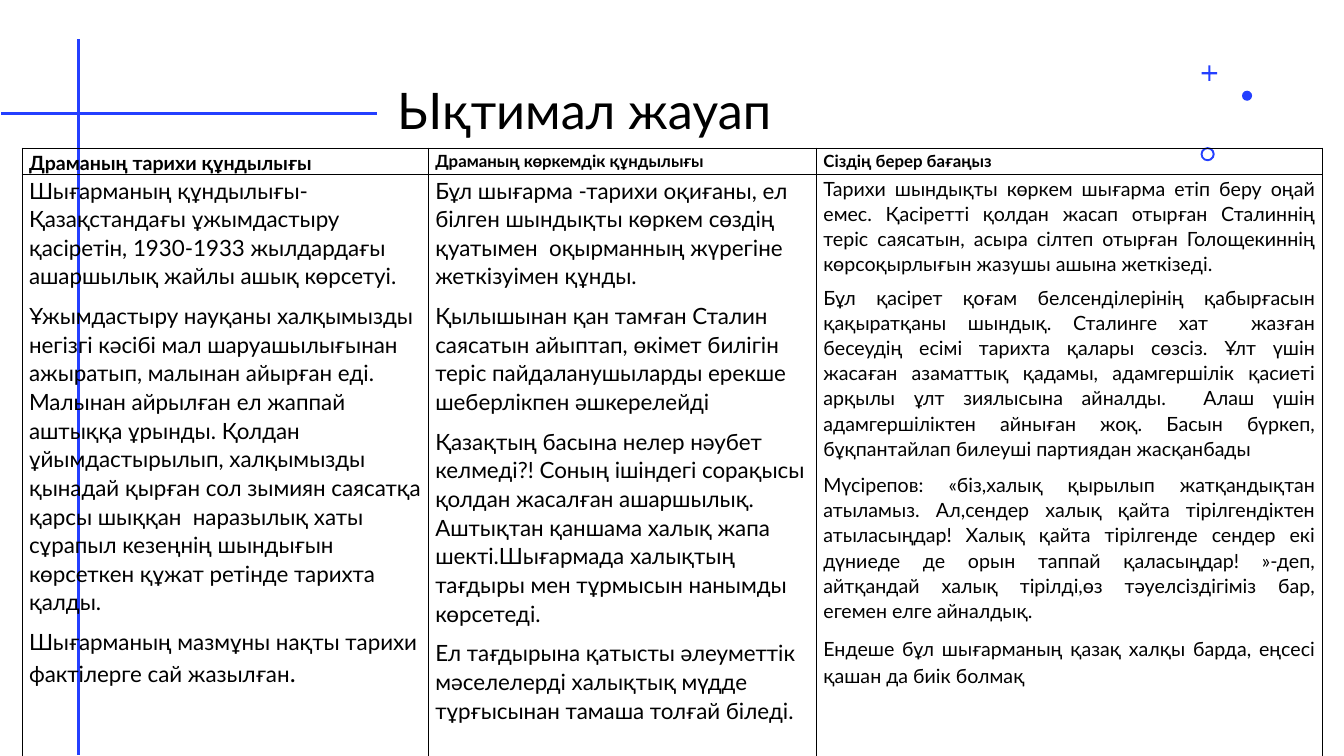
from lxml import etree
from pptx import Presentation
from pptx import util as u
from pptx.dml.color import RGBColor
from pptx.enum import shapes, text
from pptx.oxml import ns

BLACK = RGBColor(0x00, 0x00, 0x00)
BLUE = RGBColor(0x24, 0x3F, 0xFF)
FONT = "Lato"

HEADINGS = [
    ("Драманың тарихи құндылығы", 14),
    ("Драманың көркемдік құндылығы", 12),
    ("Сіздің берер бағаңыз", 12),
]
HISTORY = [
    "Шығарманың құндылығы-Қазақстандағы ұжымдастыру қасіретін, 1930-1933 жылдардағы "
    "ашаршылық жайлы ашық көрсетуі.",
    "Ұжымдастыру науқаны халқымызды негізгі кәсібі мал шаруашылығынан ажыратып, малынан "
    "айырған еді. Малынан айрылған ел жаппай аштыққа ұрынды. Қолдан ұйымдастырылып, "
    "халқымызды қынадай қырған сол зымиян саясатқа қарсы шыққан  наразылық хаты сұрапыл "
    "кезеңнің шындығын көрсеткен құжат ретінде тарихта қалды.",
    "Шығарманың мазмұны нақты тарихи фактілерге сай жазылған",
]
ARTISTRY = [
    "Бұл шығарма -тарихи оқиғаны, ел білген шындықты көркем сөздің қуатымен  оқырманның "
    "жүрегіне жеткізуімен құнды.",
    "Қылышынан қан тамған Сталин саясатын айыптап, өкімет билігін теріс пайдаланушыларды "
    "ерекше шеберлікпен әшкерелейді",
    "Қазақтың басына нелер нәубет келмеді?! Соның ішіндегі сорақысы қолдан жасалған "
    "ашаршылық. Аштықтан қаншама халық жапа шекті.Шығармада халықтың тағдыры мен "
    "тұрмысын нанымды көрсетеді.",
    "Ел тағдырына қатысты әлеуметтік мәселелерді халықтық мүдде тұрғысынан тамаша толғай "
    "біледі.",
]
OPINION = [
    "Тарихи шындықты көркем шығарма етіп беру оңай емес. Қасіретті қолдан жасап отырған "
    "Сталиннің теріс саясатын, асыра сілтеп отырған Голощекиннің көрсоқырлығын жазушы "
    "ашына жеткізеді.",
    "Бұл қасірет қоғам белсенділерінің қабырғасын қақыратқаны шындық. Сталинге хат  жазған "
    "бесеудің есімі тарихта қалары сөзсіз. Ұлт үшін жасаған азаматтық қадамы, адамгершілік "
    "қасиеті арқылы ұлт зиялысына айналды.  Алаш үшін адамгершіліктен айныған жоқ. Басын "
    "бүркеп, бұқпантайлап билеуші партиядан жасқанбады",
    "Мүсірепов: «біз,халық қырылып жатқандықтан атыламыз. Ал,сендер халық қайта "
    "тірілгендіктен атыласыңдар! Халық қайта тірілгенде сендер екі дүниеде де орын таппай "
    "қаласыңдар! »-деп, айтқандай халық тірілді,өз тәуелсіздігіміз бар, егемен елге айналдық.",
    "Ендеше бұл шығарманың қазақ халқы барда, еңсесі қашан да биік болмақ",
]


def apply(target, formats):
    for name, value in formats.items():
        setattr(target, name, value)


def format_font(font, size, bold=False):
    apply(font, {"name": FONT, "size": u.Pt(size), "bold": bold})
    font.color.rgb = BLACK


def add_title(slide, box, words):
    title = slide.shapes.title
    apply(title, dict(zip(("left", "top", "width", "height"), map(u.Pt, box))))
    frame = title.text_frame
    apply(frame, {"text": words, "word_wrap": True, "auto_size": text.MSO_AUTO_SIZE.NONE,
                  "vertical_anchor": text.MSO_ANCHOR.MIDDLE})
    paragraph = frame.paragraphs[0]
    apply(paragraph, {"alignment": text.PP_ALIGN.LEFT, "line_spacing": 0.9})
    format_font(paragraph.font, 36)


def add_rule(slide, *ends):
    rule = slide.shapes.add_connector(shapes.MSO_CONNECTOR.STRAIGHT, *map(u.Pt, ends))
    rule.line.color.rgb = BLUE
    rule.line.width = u.Pt(2)
    etree.SubElement(rule._element.spPr, ns.qn("a:effectLst"))


def add_ornaments(slide, left, top):
    """Place the plus, dot and ring around the given corner."""
    marks = [
        (shapes.MSO_SHAPE.CROSS, 0.6, 0, 11, 0.43),
        (shapes.MSO_SHAPE.OVAL, 29.4, 18, 7.2, None),
        (shapes.MSO_SHAPE.DONUT, -0.2, 58.3, 10.1, 0.14),
    ]
    for kind, dx, dy, size, adjustment in marks:
        mark = slide.shapes.add_shape(
            kind, u.Pt(left + dx), u.Pt(top + dy), u.Pt(size), u.Pt(size))
        if adjustment:
            mark.adjustments[0] = adjustment
        mark.shadow.inherit = False
        mark.fill.solid()
        mark.fill.fore_color.rgb = BLUE
        mark.line.fill.background()


def add_borders(cell):
    properties = cell._tc.get_or_add_tcPr()
    for position, side in enumerate(("lnL", "lnR", "lnT", "lnB")):
        border = etree.Element(ns.qn(f"a:{side}"), w=str(u.Pt(1)))
        fill = etree.SubElement(border, ns.qn("a:solidFill"))
        etree.SubElement(fill, ns.qn("a:srgbClr"), val=str(BLACK))
        properties.insert(position, border)


def fill_cell(cell, lines, size, bold=False, alignment=text.PP_ALIGN.LEFT):
    apply(cell, {"margin_left": u.Pt(5), "margin_right": u.Pt(5),
                 "margin_top": u.Pt(0.7), "margin_bottom": 0,
                 "vertical_anchor": text.MSO_ANCHOR.TOP})
    cell.fill.background()
    add_borders(cell)
    cell.text = "\n".join(lines)
    for paragraph in cell.text_frame.paragraphs:
        apply(paragraph, {"alignment": alignment, "line_spacing": 1.07,
                          "space_after": u.Pt(8)})
        for run in paragraph.runs:
            format_font(run.font, size, bold)


def add_answer_table(slide, left, top, widths, heights):
    table = slide.shapes.add_table(
        len(heights), len(widths), u.Pt(left), u.Pt(top),
        u.Pt(sum(widths)), u.Pt(sum(heights))).table
    apply(table, {"first_row": False, "horz_banding": False})
    for column, width in zip(table.columns, widths):
        column.width = u.Pt(width)
    for row, height in zip(table.rows, heights):
        row.height = u.Pt(height)

    for index, (heading, size) in enumerate(HEADINGS):
        fill_cell(table.cell(0, index), [heading], size, bold=True)
    history, artistry, opinion = table.rows[1].cells
    fill_cell(history, HISTORY, 16)
    full_stop = history.text_frame.paragraphs[-1].add_run()
    full_stop.text = "."
    format_font(full_stop.font, 18)
    fill_cell(artistry, ARTISTRY, 16)
    fill_cell(opinion, OPINION, 14, alignment=text.PP_ALIGN.JUSTIFY)
    paragraphs = opinion.text_frame.paragraphs
    paragraphs[0].space_after = u.Pt(6)
    apply(paragraphs[-1], {"line_spacing": 1.15, "space_after": u.Pt(10)})


def main():
    presentation = Presentation()
    apply(presentation, {"slide_width": u.Pt(960), "slide_height": u.Pt(540)})
    slide = presentation.slides.add_slide(presentation.slide_layouts[5])
    add_rule(slide, 56.2, 28, 56.2, 539.3)
    add_title(slide, (276.5, 28.8, 563.8, 104.4), "Ықтимал жауап")
    add_ornaments(slide, 857.8, 46.8)
    add_rule(slide, 0.7, 80.8, 269.5, 80.8)
    add_answer_table(slide, 15.8, 105.8, (290.2, 277.2, 361.4), (18.7, 436.3))
    presentation.save("out.pptx")


if __name__ == "__main__":
    main()
